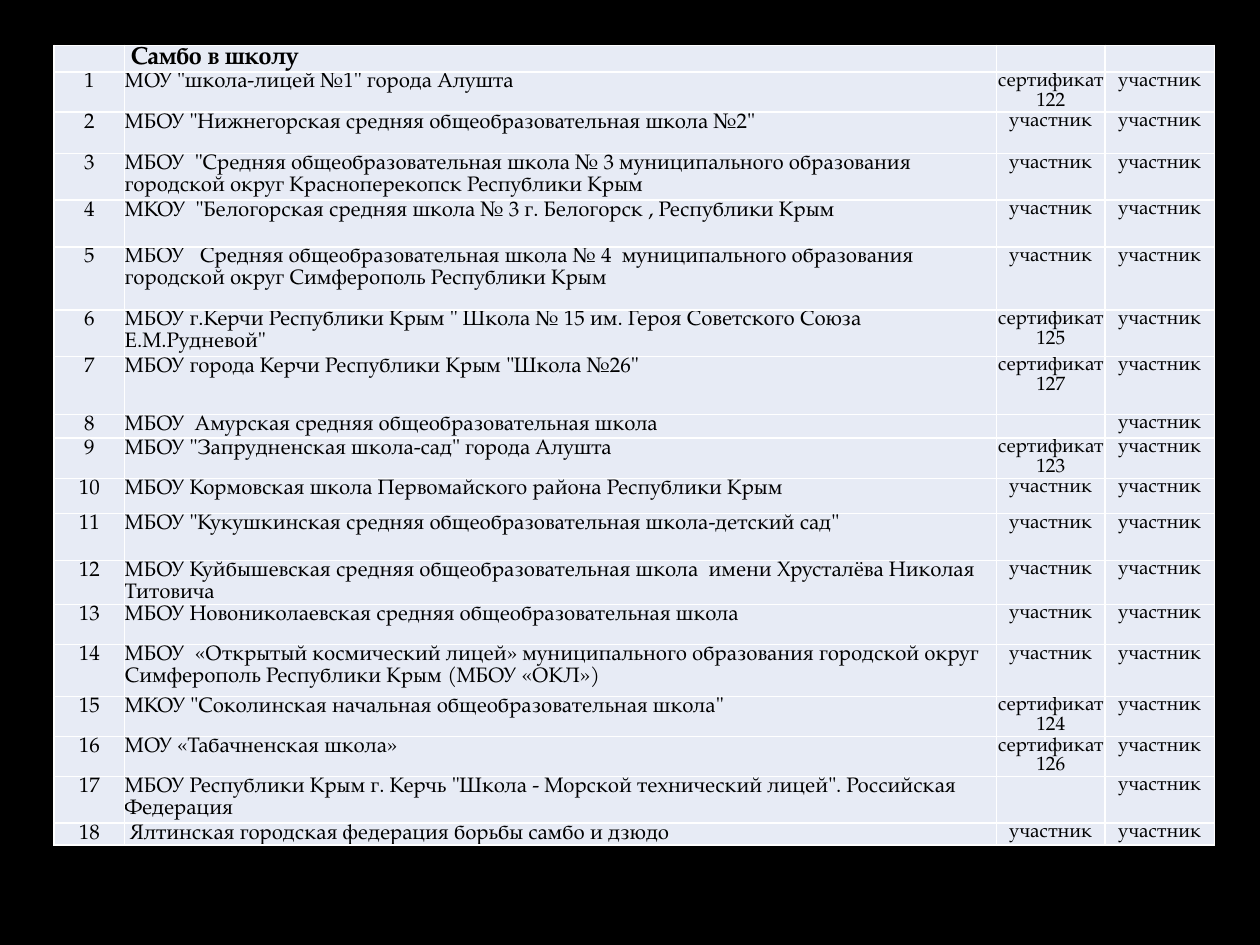
from lxml import etree
from pptx import Presentation
from pptx.dml.color import RGBColor
from pptx.enum.text import PP_ALIGN
from pptx.oxml.ns import qn
from pptx.util import Inches, Pt

CENTER, LEFT = PP_ALIGN.CENTER, PP_ALIGN.LEFT

FONT = "TeX Gyre Pagella"
BLACK, WHITE, CELL_FILL = "000000", "FFFFFF", "E7EBF5"
LINE_RATIO = 1.04
TITLE_SIZE, NAME_SIZE, STATUS_SIZE = 14, 12, 11

TITLE = " Самбо в школу"
TITLE_HEIGHT = 0.21
MEMBER = "участник"
SCHOOLS = [
    ('МОУ "школа-лицей №1" города Алушта', "сертификат 122", 0.32),
    ('МБОУ "Нижнегорская средняя общеобразовательная школа №2"', MEMBER, 0.33),
    ('МБОУ  "Средняя общеобразовательная школа № 3 муниципального образования '
     'городской округ Красноперекопск Республики Крым', MEMBER, 0.37),
    ('МКОУ  "Белогорская средняя школа № 3 г. Белогорск , Республики Крым', MEMBER, 0.37),
    ('МБОУ   Средняя общеобразовательная школа № 4  муниципального образования '
     'городской округ Симферополь Республики Крым', MEMBER, 0.5),
    ('МБОУ г.Керчи Республики Крым " Школа № 15 им. Героя Советского Союза '
     'Е.М.Рудневой"', "сертификат 125", 0.37),
    ('МБОУ города Керчи Республики Крым "Школа №26"', "сертификат 127", 0.46),
    ('МБОУ  Амурская средняя общеобразовательная школа', "", 0.17),
    ('МБОУ "Запрудненская школа-сад" города Алушта', "сертификат 123", 0.32),
    ('МБОУ Кормовская школа Первомайского района Республики Крым', MEMBER, 0.28),
    ('МБОУ "Кукушкинская средняя общеобразовательная школа-детский сад"', MEMBER, 0.37),
    ('МБОУ Куйбышевская средняя общеобразовательная школа  имени Хрусталёва '
     'Николая Титовича', MEMBER, 0.35),
    ('МБОУ Новониколаевская средняя общеобразовательная школа', MEMBER, 0.32),
    ('МБОУ  «Открытый космический лицей» муниципального образования городской '
     'округ Симферополь Республики Крым (МБОУ «ОКЛ»)', MEMBER, 0.41),
    ('МКОУ "Соколинская начальная общеобразовательная школа"', "сертификат 124", 0.32),
    ('МОУ «Табачненская школа»', "сертификат 126", 0.31),
    ('МБОУ Республики Крым г. Керчь "Школа - Морской технический лицей". '
     'Российская Федерация', "", 0.37),
    (' Ялтинская городская федерация борьбы самбо и дзюдо', MEMBER, 0.17),
]
COLUMNS = [
    (0.56, NAME_SIZE, CENTER),
    (6.92, NAME_SIZE, LEFT),
    (0.86, STATUS_SIZE, CENTER),
    (0.87, STATUS_SIZE, CENTER),
]


def color(hex_value):
    return RGBColor.from_string(hex_value)


def add_borders(cell):
    properties = cell._tc.get_or_add_tcPr()
    for side in ("a:lnL", "a:lnR", "a:lnT", "a:lnB"):
        line = etree.SubElement(properties, qn(side), w=str(Pt(1)))
        fill = etree.SubElement(line, qn("a:solidFill"))
        etree.SubElement(fill, qn("a:srgbClr"), val=WHITE)


def fill_cell(cell, text, size, align, bold):
    add_borders(cell)
    cell.fill.solid()
    cell.fill.fore_color.rgb = color(CELL_FILL)
    cell.margin_left = cell.margin_right = cell.margin_top = cell.margin_bottom = 0
    paragraph = cell.text_frame.paragraphs[0]
    paragraph.text = text
    paragraph.alignment = align
    paragraph.line_spacing = Pt(round(size * LINE_RATIO, 1))
    paragraph.font.size = Pt(size)
    for run in paragraph.runs:
        run.font.name = FONT
        run.font.size = Pt(size)
        run.font.bold = bold
        run.font.color.rgb = color(BLACK)


def main():
    deck = Presentation()
    deck.slide_width, deck.slide_height = Inches(10), Inches(7.5)
    slide = deck.slides.add_slide(deck.slide_layouts[6])
    slide.background.fill.solid()
    slide.background.fill.fore_color.rgb = color(BLACK)

    rows = [("", TITLE, "", "")]
    rows += [(str(number), name, status, MEMBER)
             for number, (name, status, _) in enumerate(SCHOOLS, 1)]
    heights = [TITLE_HEIGHT] + [height for _, _, height in SCHOOLS]
    widths = [width for width, _, _ in COLUMNS]

    table = slide.shapes.add_table(
        len(rows), len(COLUMNS), Inches(0.43), Inches(0.36),
        Inches(sum(widths)), Inches(sum(heights))).table
    table.first_row = table.horz_banding = False
    for column, width in zip(table.columns, widths):
        column.width = Inches(width)
    for r, (texts, height) in enumerate(zip(rows, heights)):
        table.rows[r].height = Inches(height)
        for c, (text, (_, size, align)) in enumerate(zip(texts, COLUMNS)):
            is_title = text == TITLE
            fill_cell(table.cell(r, c), text, TITLE_SIZE if is_title else size,
                      align, is_title)
    deck.save("out.pptx")


if __name__ == "__main__":
    main()
